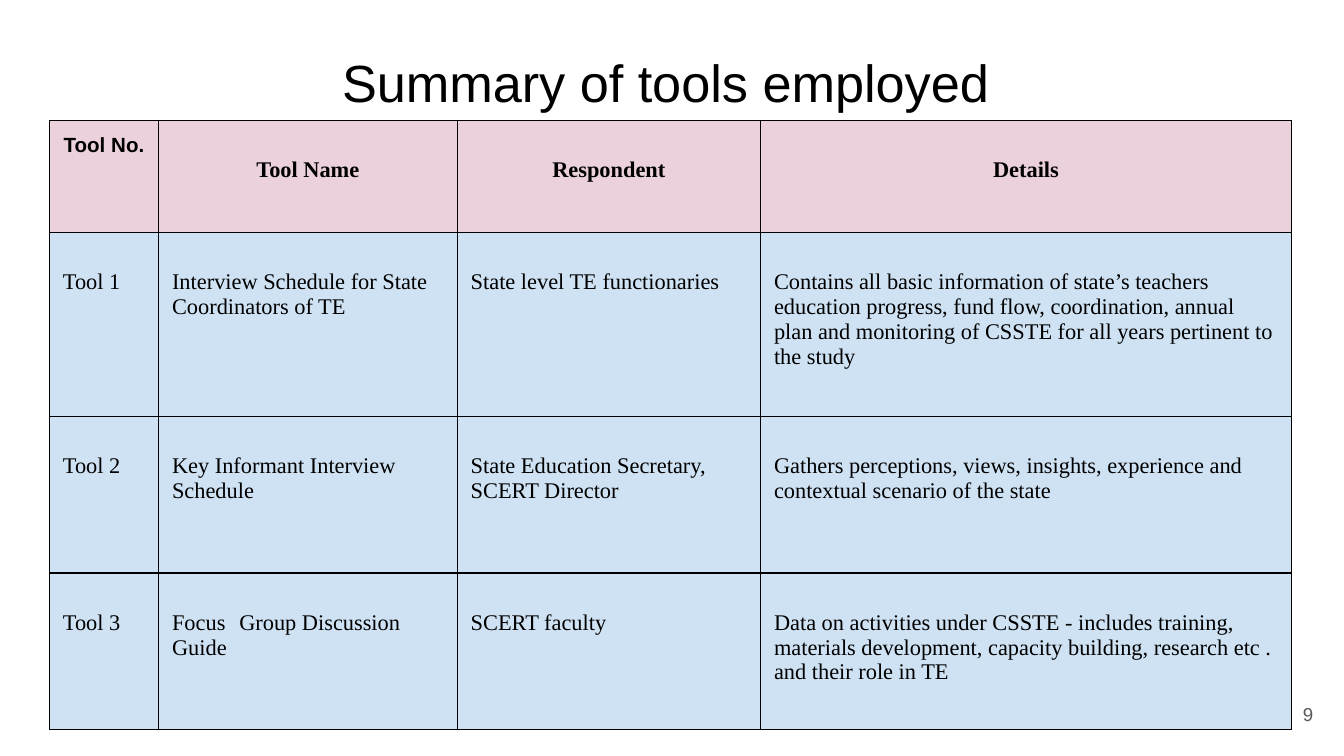
"""Build the slide that summarises the tools employed."""
from lxml import etree
from pptx import Presentation
from pptx.dml.color import RGBColor
from pptx.enum.text import MSO_ANCHOR, PP_ALIGN
from pptx.oxml.ns import qn
from pptx.util import Pt

LEFT, CENTER, RIGHT = PP_ALIGN.LEFT, PP_ALIGN.CENTER, PP_ALIGN.RIGHT
TOP, MIDDLE = MSO_ANCHOR.TOP, MSO_ANCHOR.MIDDLE
COLORS = {
    "text": "000000",
    "number": "595959",
    "header": "EAD1DC",
    "body": "CFE2F3",
    "border": "000001",
}
SANS, SERIF = "Arial", "Times New Roman"
INSET = 7.2
TEXT_DROP = 20
COLUMN_WIDTHS = [58.5, 160, 162.5, 284.5]
ROW_HEIGHTS = [60, 98.5, 84, 84]
TOOLS = [
    ["Tool No.", "Tool Name", "Respondent", "Details"],
    ["Tool 1", "Interview Schedule for State Coordinators of TE",
     "State level TE functionaries",
     "Contains all basic information of state’s teachers education progress, "
     "fund flow, coordination, annual plan and monitoring of CSSTE for all "
     "years pertinent to the study"],
    ["Tool 2", "Key Informant Interview Schedule",
     "State Education Secretary, SCERT Director",
     "Gathers perceptions, views, insights, experience and contextual "
     "scenario of the state"],
    ["Tool 3", "Focus \tGroup Discussion Guide", "SCERT faculty",
     "Data on activities under CSSTE - includes training, materials "
     "development, capacity building, research etc . and their role in TE"],
]


def write_text(frame, text, size=12, font=SERIF, color="text", bold=False, align=LEFT):
    """Write one formatted paragraph into a text frame."""
    para = frame.paragraphs[0]
    para.alignment = align
    span = para.add_run()
    span.text = text
    span.font.size = Pt(size)
    span.font.name = font
    span.font.bold = bold
    span.font.color.rgb = RGBColor.from_string(COLORS[color])


def add_text_box(page, left, top, width, height, text, anchor=TOP, **style):
    """Add a wrapping text box with even insets."""
    box = page.shapes.add_textbox(Pt(left), Pt(top), Pt(width), Pt(height))
    frame = box.text_frame
    frame.word_wrap = True
    frame.vertical_anchor = anchor
    frame.margin_left = frame.margin_right = Pt(INSET)
    frame.margin_top = frame.margin_bottom = Pt(INSET)
    write_text(frame, text, **style)


def add_borders(cell, width=0.75):
    """Draw a solid line on all four sides of a cell."""
    properties = cell._tc.get_or_add_tcPr()
    for side in ("lnL", "lnR", "lnT", "lnB"):
        line = etree.SubElement(properties, qn(f"a:{side}"), w=str(Pt(width)))
        fill = etree.SubElement(line, qn("a:solidFill"))
        etree.SubElement(fill, qn("a:srgbClr"), val=COLORS["border"])


def fill_cell(cell, text, fill, drop=TEXT_DROP, **style):
    """Set the borders, fill, margins and text of a cell."""
    add_borders(cell)
    cell.fill.solid()
    cell.fill.fore_color.rgb = RGBColor.from_string(COLORS[fill])
    cell.margin_left = cell.margin_right = cell.margin_bottom = Pt(INSET)
    cell.margin_top = Pt(drop)
    cell.vertical_anchor = TOP
    write_text(cell.text_frame, text, **style)


def add_tools_table(page, left, top):
    """Add the table of tools with its header row."""
    table = page.shapes.add_table(
        len(ROW_HEIGHTS), len(COLUMN_WIDTHS), Pt(left), Pt(top),
        Pt(sum(COLUMN_WIDTHS)), Pt(sum(ROW_HEIGHTS))).table
    table.first_row = table.horz_banding = False
    for column, width in zip(table.columns, COLUMN_WIDTHS):
        column.width = Pt(width)
    for row, height, texts in zip(table.rows, ROW_HEIGHTS, TOOLS):
        row.height = Pt(height)
        for cell, text in zip(row.cells, texts):
            if texts is not TOOLS[0]:
                fill_cell(cell, text, "body")
            elif text == texts[0]:
                fill_cell(cell, text, "header", drop=INSET, size=11, font=SANS,
                          bold=True, align=CENTER)
            else:
                fill_cell(cell, text, "header", bold=True, align=CENTER)


def main():
    """Build and save the deck."""
    deck = Presentation()
    deck.slide_width, deck.slide_height = Pt(720), Pt(405)
    page = deck.slides.add_slide(deck.slide_layouts[6])
    add_text_box(page, 21, 19.5, 671, 29, "Summary of tools employed",
                 size=28, font=SANS, align=CENTER)
    add_tools_table(page, 26.5, 64.5)
    add_text_box(page, 667.5, 367, 43, 31, "9", anchor=MIDDLE, size=10,
                 font=SANS, color="number", align=RIGHT)
    deck.save("out.pptx")


if __name__ == "__main__":
    main()
